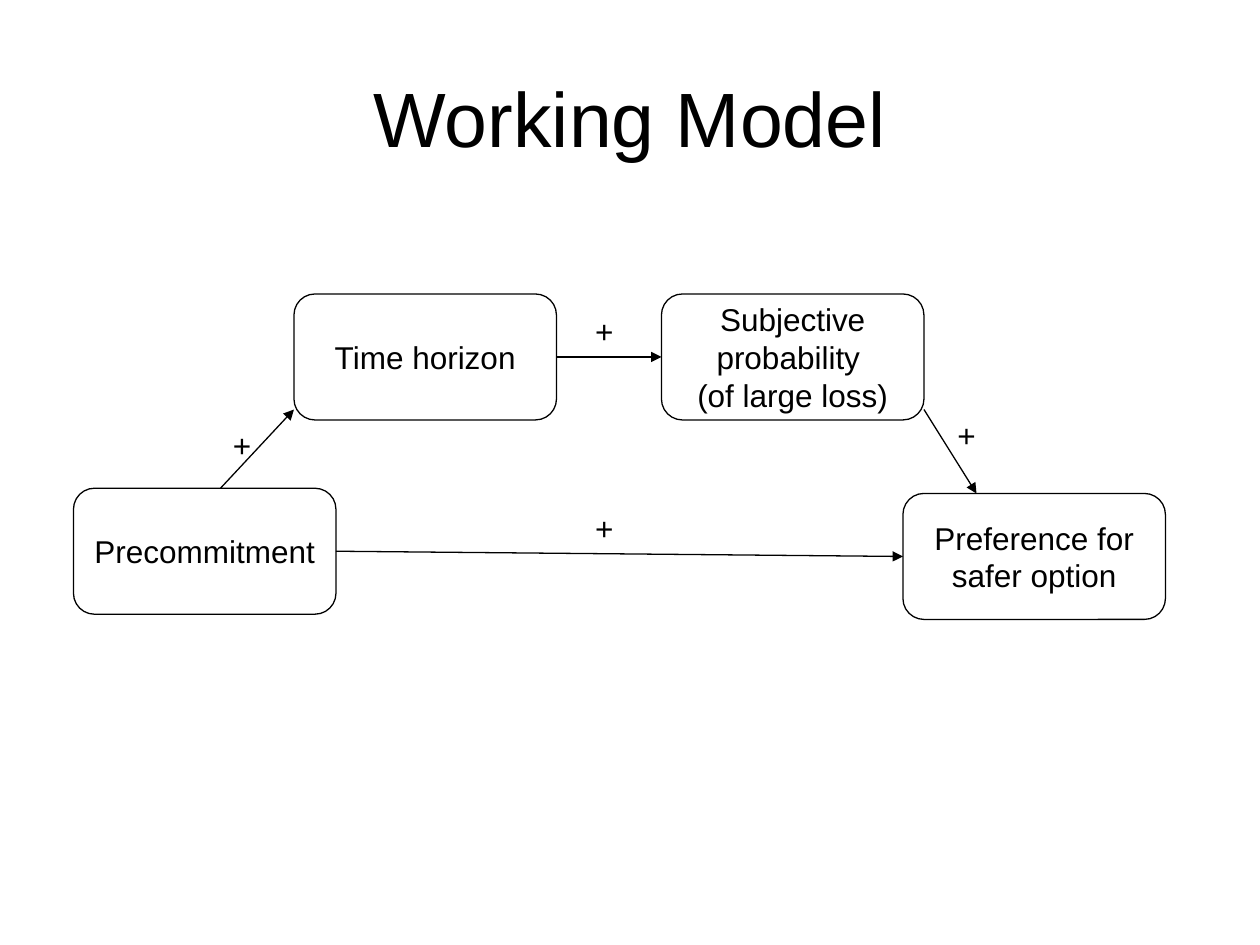
from typing import NamedTuple, Optional

from lxml.etree import SubElement
from pptx import Presentation
from pptx.dml.color import RGBColor
from pptx.enum.shapes import MSO_CONNECTOR, MSO_SHAPE
from pptx.enum.text import MSO_ANCHOR, MSO_AUTO_SIZE, PP_ALIGN
from pptx.oxml.ns import qn
from pptx.util import Pt

BLACK = RGBColor(0x00, 0x00, 0x00)
WHITE = RGBColor(0xFF, 0xFF, 0xFF)
FONT = "Arial"
BOX_W, BOX_H = 150, 72
SIGN_W, SIGN_H = 25, 29
RIGHT, LEFT = 3, 1


class Box(NamedTuple):
    name: str
    x: float
    y: float
    text: str


class Arrow(NamedTuple):
    start: tuple[float, float]
    end: tuple[float, float]
    tail: Optional[str] = None
    head: Optional[str] = None


BOXES = [
    Box("pre", 42, 279, "Precommitment"),
    Box("pref", 516, 282, "Preference for safer option"),
    Box("prob", 378, 168, "Subjective probability \n(of large loss)"),
    Box("time", 168, 168, "Time horizon"),
]
ARROWS = [
    Arrow((192, 315), (516, 318), "pre", "pref"),
    Arrow((126, 279), (168, 234)),
    Arrow((318, 204), (378, 204), "time", "prob"),
    Arrow((528, 234), (558, 282)),
]
SIGNS = [(126, 240), (333, 287.5), (333, 175), (540, 234)]


def write(shape, text: str, *, size: float = 18, align=PP_ALIGN.CENTER,
          anchor=MSO_ANCHOR.MIDDLE, wrap: bool = True) -> None:
    frame = shape.text_frame
    frame.text = text
    frame.word_wrap = wrap
    frame.vertical_anchor = anchor
    for para in frame.paragraphs:
        para.alignment = align
        para.font.size = Pt(size)
        para.font.name = FONT
        para.font.color.rgb = BLACK


def add_box(slide, box: Box):
    shape = slide.shapes.add_shape(MSO_SHAPE.ROUNDED_RECTANGLE, Pt(box.x), Pt(box.y),
                                   Pt(BOX_W), Pt(BOX_H))
    shape.shadow.inherit = False
    shape.fill.solid()
    shape.fill.fore_color.rgb = WHITE
    shape.line.color.rgb = BLACK
    shape.line.width = Pt(0.75)
    write(shape, box.text)
    return shape


def add_arrow(slide, arrow: Arrow, nodes: dict) -> None:
    line = slide.shapes.add_connector(MSO_CONNECTOR.STRAIGHT,
                                      *map(Pt, arrow.start + arrow.end))
    if arrow.tail:
        line.begin_connect(nodes[arrow.tail], RIGHT)
    if arrow.head:
        line.end_connect(nodes[arrow.head], LEFT)
    line.line.color.rgb = BLACK
    line.line.width = Pt(0.75)
    props = line.element.spPr
    SubElement(props.find(qn("a:ln")), qn("a:tailEnd"), type="triangle")
    SubElement(props, qn("a:effectLst"))


def add_sign(slide, x: float, y: float) -> None:
    sign = slide.shapes.add_textbox(Pt(x), Pt(y), Pt(SIGN_W), Pt(SIGN_H))
    write(sign, "+", align=PP_ALIGN.LEFT, anchor=MSO_ANCHOR.TOP, wrap=False)
    sign.text_frame.auto_size = MSO_AUTO_SIZE.SHAPE_TO_FIT_TEXT


def main() -> None:
    deck = Presentation()
    deck.slide_width, deck.slide_height = Pt(720), Pt(540)
    slide = deck.slides.add_slide(deck.slide_layouts[5])

    title = slide.shapes.title
    title.left, title.top, title.width, title.height = map(Pt, (36, 21.6, 648, 90))
    write(title, "Working Model", size=44)

    nodes = {box.name: add_box(slide, box) for box in BOXES}
    for arrow in ARROWS:
        add_arrow(slide, arrow, nodes)
    for x, y in SIGNS:
        add_sign(slide, x, y)

    deck.save("out.pptx")


if __name__ == "__main__":
    main()
